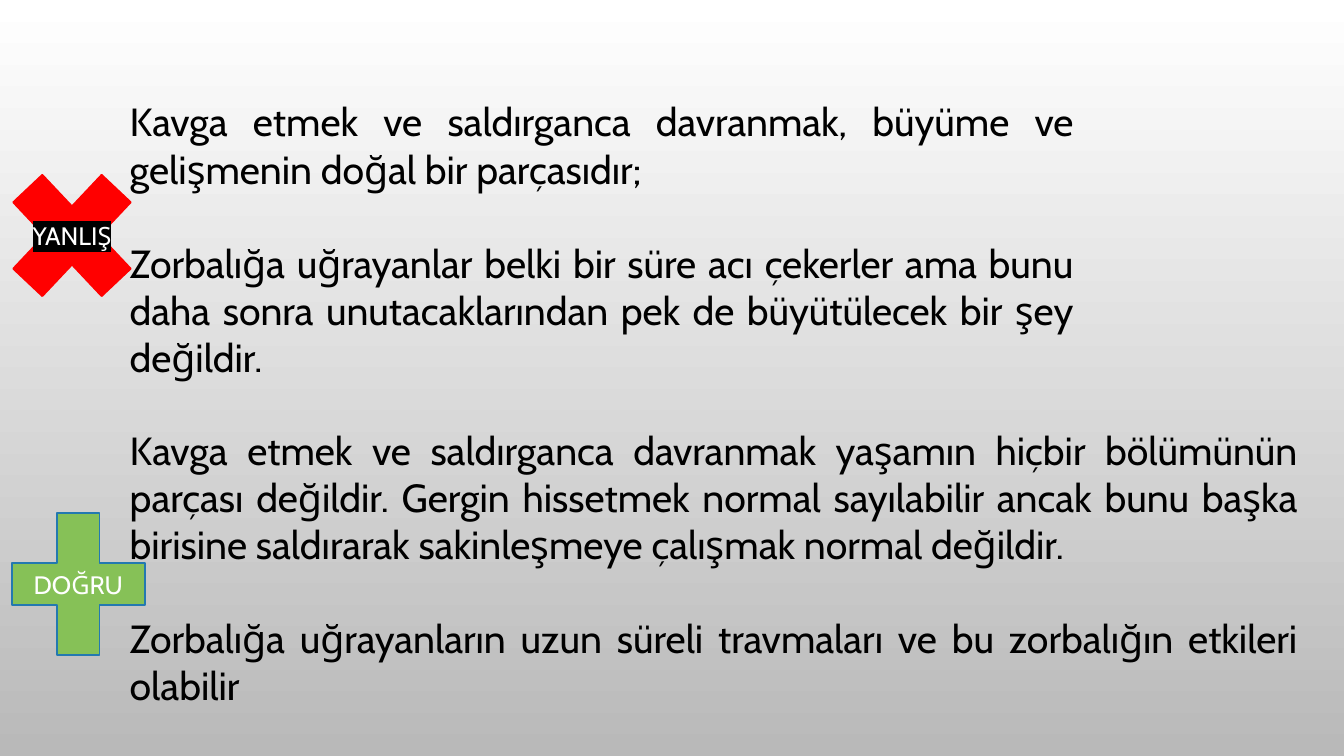
from lxml import etree
from pptx import Presentation
from pptx.dml.color import RGBColor
from pptx.enum.shapes import MSO_SHAPE
from pptx.enum.text import MSO_ANCHOR, PP_ALIGN
from pptx.oxml.ns import qn
from pptx.util import Cm, Pt

CROSS, PLUS = MSO_SHAPE.MATH_MULTIPLY, MSO_SHAPE.MATH_PLUS
MIDDLE = MSO_ANCHOR.MIDDLE
CENTER, JUSTIFY = PP_ALIGN.CENTER, PP_ALIGN.JUSTIFY

WHITE = RGBColor(0xFF, 0xFF, 0xFF)
BLACK = RGBColor(0x00, 0x00, 0x00)
GREY = RGBColor(0xB9, 0xB9, 0xB9)
RED = RGBColor(0xFF, 0x00, 0x00)
GREEN = RGBColor(0x86, 0xC1, 0x57)
BLUE = RGBColor(0x23, 0x79, 0xB0)

FONT = "Cabin"
TEXT_LEFT = 3.02
PARAGRAPH_GAP = Pt(33.6)  # one line of 28 pt text

MYTHS = [
    "Kavga etmek ve saldırganca davranmak, büyüme ve gelişmenin doğal bir parçasıdır;",
    "Zorbalığa uğrayanlar belki bir süre acı çekerler ama bunu daha sonra "
    "unutacaklarından pek de büyütülecek bir şey değildir.",
]
FACTS = [
    "Kavga etmek ve saldırganca davranmak yaşamın hiçbir bölümünün parçası değildir. "
    "Gergin hissetmek normal sayılabilir ancak bunu başka birisine saldırarak "
    "sakinleşmeye çalışmak normal değildir.",
    "Zorbalığa uğrayanların uzun süreli travmaları ve bu zorbalığın etkileri olabilir",
]


def style_paragraph(paragraph, size, color, alignment):
    paragraph.alignment = alignment
    paragraph.font.size = Pt(size)
    paragraph.font.name = FONT
    paragraph.font.color.rgb = color


def paint_background(page):
    fill = page.background.fill
    fill.gradient()
    fill.gradient_angle = 270  # top to bottom
    for stop, color in zip(fill.gradient_stops, (WHITE, GREY)):
        stop.color.rgb = color


def add_statements(page, box, statements):
    frame = page.shapes.add_textbox(*map(Cm, box)).text_frame
    frame.word_wrap = True
    for index, statement in enumerate(statements):
        paragraph = frame.add_paragraph() if index else frame.paragraphs[0]
        paragraph.text = statement
        style_paragraph(paragraph, 28, BLACK, JUSTIFY)
        if index:
            paragraph.space_before = PARAGRAPH_GAP


def add_mark(page, box, preset, label, fill_color, line_color, highlight=None):
    mark = page.shapes.add_shape(preset, *map(Cm, box))
    mark.shadow.inherit = False
    mark.fill.solid()
    mark.fill.fore_color.rgb = fill_color
    mark.line.color.rgb = line_color
    mark.line.width = Pt(1.25)
    mark.text_frame.vertical_anchor = MIDDLE
    paragraph = mark.text_frame.paragraphs[0]
    span = paragraph.add_run()
    span.text = label
    style_paragraph(paragraph, 18, WHITE, CENTER)
    if highlight is not None:
        properties = span._r.get_or_add_rPr()
        marker = etree.SubElement(properties, qn("a:highlight"))
        etree.SubElement(marker, qn("a:srgbClr"), val=str(highlight))


def main():
    deck = Presentation()
    deck.slide_width, deck.slide_height = Cm(33.87), Cm(19.05)
    page = deck.slides.add_slide(deck.slide_layouts[6])
    paint_background(page)

    # Myths with their cross, then the plus and the facts
    add_statements(page, (TEXT_LEFT, 2.34, 24.28, 8.64), MYTHS)
    add_mark(page, (-0.33, 3.66, 4.29, 4.55), CROSS, "YANLIŞ", RED, RED, BLACK)
    add_mark(page, (-0.3, 12.29, 4.55, 4.85), PLUS, "DOĞRU", GREEN, BLUE)
    add_statements(page, (TEXT_LEFT, 10.62, 29.92, 7.44), FACTS)

    deck.save("out.pptx")


if __name__ == "__main__":
    main()
